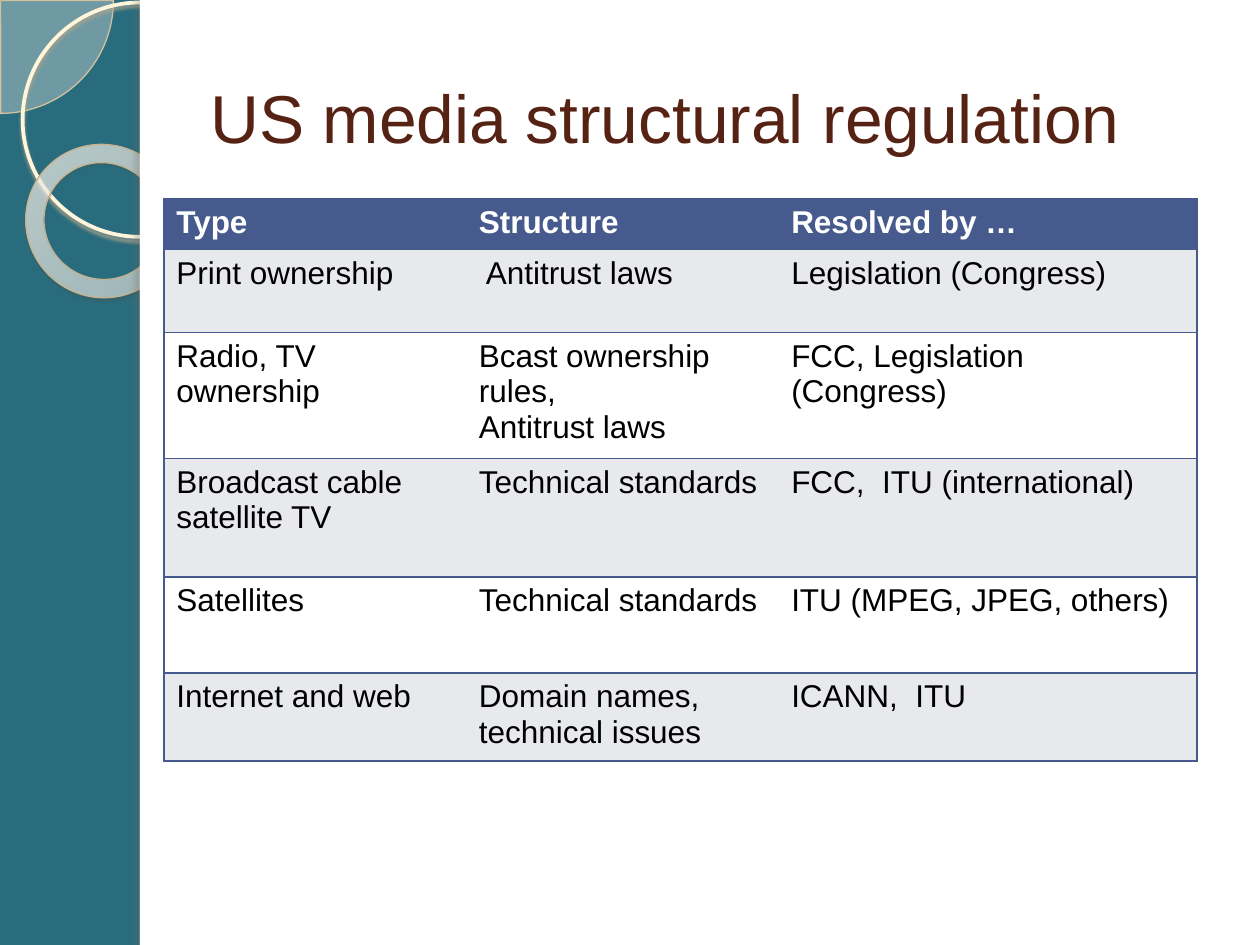
from dataclasses import dataclass
from typing import Optional

from lxml import etree
from pptx import Presentation
from pptx.dml.color import RGBColor
from pptx.enum import shapes, text
from pptx.oxml import parse_xml
from pptx.oxml.ns import nsdecls, qn
from pptx.util import Inches, Pt

FONT = "Arial"
COLORS = {
    "teal": "296C7D",
    "white": "FFFFFF",
    "black": "000000",
    "title": "562214",
    "header": "475A8D",
    "band": "E8E9ED",
    "cream": "FEF9F3",
    "pie_line": "D1C19D",
    "circle_line": "FFF5DB",
    "circle_shadow": "ADA48C",
    "ring_line": "C5B390",
    "ring_shadow": "564E40",
    "ring_inner": "FEFBF4",
    "ring_middle": "FFFDF8",
    "ring_outer": "EDCF8C",
    "panel_shadow": "6F6A5F",
}


@dataclass
class Shadow:
    color: str
    opacity: int
    blur: float
    distance: float
    angle: int


@dataclass
class Decor:
    kind: shapes.MSO_SHAPE
    box: tuple
    fill: Optional[str] = None
    opacity: int = 100
    gradient: tuple = ()
    line: Optional[str] = None
    width: float = 0.75
    adjust: tuple = ()
    rotation: float = 0
    shadow: Optional[Shadow] = None


DECORS = [
    Decor(shapes.MSO_SHAPE.PIE, (-0.89, -0.89, 1.79, 1.79), fill="cream", opacity=33,
          line="pie_line", adjust=(0, 54)),
    Decor(shapes.MSO_SHAPE.OVAL, (0.18, 0.02, 1.86, 1.86), line="circle_line", width=2.15,
          shadow=Shadow("circle_shadow", 85, 2, 2, 90)),
    Decor(shapes.MSO_SHAPE.DONUT, (0.2, 1.15, 1.23, 1.21), line="ring_line",
          gradient=((0, "ring_inner", 70), (70, "ring_middle", 55), (100, "ring_outer", 60)),
          adjust=(0.12,), rotation=38.6, shadow=Shadow("ring_shadow", 35, 1, 1.2, 75)),
    Decor(shapes.MSO_SHAPE.RECTANGLE, (1.11, 0, 8.89, 7.5), fill="white"),
    Decor(shapes.MSO_SHAPE.RECTANGLE, (1.11, 0, 0.08, 7.5), fill="white",
          shadow=Shadow("panel_shadow", 25, 3, 3, 180)),
]

COLUMNS = [2.4, 2.48, 3.32]
ROW_HEIGHTS = [0.38, 0.66, 0.66, 0.94, 0.76, 0.66]
ROWS = [
    ("Type", "Structure", "Resolved by …"),
    ("Print ownership", " Antitrust laws", "Legislation (Congress)"),
    ("Radio, TV ownership", "Bcast ownership rules,\nAntitrust laws",
     "FCC, Legislation (Congress)"),
    ("Broadcast cable satellite TV", "Technical standards", "FCC,  ITU (international)"),
    ("Satellites", "Technical standards", "ITU (MPEG, JPEG, others)"),
    ("Internet and web", "Domain names, technical issues", "ICANN,  ITU"),
]


def rgb(name: str) -> RGBColor:
    return RGBColor.from_string(COLORS[name])


def color_xml(name: str, opacity: int) -> str:
    return f'<a:srgbClr val="{COLORS[name]}"><a:alpha val="{opacity * 1000}"/></a:srgbClr>'


def add_decor(s, d: Decor) -> None:
    sp = s.shapes.add_shape(d.kind, *map(Inches, d.box))
    sp.shadow.inherit = False
    sp.rotation = d.rotation
    for i, value in enumerate(d.adjust):
        sp.adjustments[i] = value
    props = sp._element.spPr
    if d.gradient:
        stops = "".join(f'<a:gs pos="{pos * 1000}">{color_xml(name, opacity)}</a:gs>'
                        for pos, name, opacity in d.gradient)
        props.find(qn("a:prstGeom")).addnext(parse_xml(
            f'<a:gradFill {nsdecls("a")}><a:gsLst>{stops}</a:gsLst><a:path path="circle">'
            '<a:fillToRect l="0" t="0" r="100000" b="100000"/></a:path></a:gradFill>'))
    elif d.fill:
        sp.fill.solid()
        sp.fill.fore_color.rgb = rgb(d.fill)
        if d.opacity < 100:
            color = props.find(qn("a:solidFill")).find(qn("a:srgbClr"))
            etree.SubElement(color, qn("a:alpha"), val=str(d.opacity * 1000))
    else:
        sp.fill.background()
    if d.line:
        sp.line.color.rgb = rgb(d.line)
        sp.line.width = Pt(d.width)
    else:
        sp.line.fill.background()
    if d.shadow:
        sh = d.shadow
        props.find(qn("a:effectLst")).append(parse_xml(
            f'<a:outerShdw {nsdecls("a")} blurRad="{Pt(sh.blur)}" dist="{Pt(sh.distance)}" '
            f'dir="{sh.angle * 60000}" algn="tl" rotWithShape="0">'
            f'{color_xml(sh.color, sh.opacity)}</a:outerShdw>'))


def style_text(tf, size: float, color: str, bold: bool = False) -> None:
    for p in tf.paragraphs:
        p.font.name = FONT
        p.font.size = Pt(size)
        p.font.bold = bold
        p.font.color.rgb = rgb(color)


def add_title(s, wording: str) -> None:
    tf = s.shapes.add_textbox(Inches(1.57), Inches(0.3), Inches(8.2), Inches(1.25)).text_frame
    tf.word_wrap = True
    tf.vertical_anchor = text.MSO_ANCHOR.MIDDLE
    tf.text = wording
    style_text(tf, 38.7, "title")


def set_borders(cell, visible: str) -> None:
    props = cell._tc.get_or_add_tcPr()
    for side in "LRTB":
        fill = (f'<a:solidFill>{color_xml("header", 100)}</a:solidFill>'
                if side in visible else "<a:noFill/>")
        props.append(parse_xml(
            f'<a:ln{side} {nsdecls("a")} w="{Pt(1)}">{fill}</a:ln{side}>'))


def add_regulation_table(s) -> None:
    table = s.shapes.add_table(len(ROWS), len(COLUMNS), Inches(1.3), Inches(1.58),
                               Inches(sum(COLUMNS)), Inches(sum(ROW_HEIGHTS))).table
    table.horz_banding = False
    for column, width in zip(table.columns, COLUMNS):
        column.width = Inches(width)
    for i, (row, height, wordings) in enumerate(zip(table.rows, ROW_HEIGHTS, ROWS)):
        row.height = Inches(height)
        fill = "header" if i == 0 else "band" if i % 2 else "white"
        for j, (cell, wording) in enumerate(zip(row.cells, wordings)):
            cell.text = wording
            style_text(cell.text_frame, 18, "black" if i else "white", bold=i == 0)
            set_borders(cell, "TB" + {0: "L", len(COLUMNS) - 1: "R"}.get(j, ""))
            cell.fill.solid()
            cell.fill.fore_color.rgb = rgb(fill)


def main() -> None:
    prs = Presentation()
    prs.slide_width, prs.slide_height = Inches(10), Inches(7.5)
    s = prs.slides.add_slide(prs.slide_layouts[6])
    s.background.fill.solid()
    s.background.fill.fore_color.rgb = rgb("teal")
    for decor in DECORS:
        add_decor(s, decor)
    add_title(s, "US media structural regulation")
    add_regulation_table(s)
    prs.save("out.pptx")


if __name__ == "__main__":
    main()
